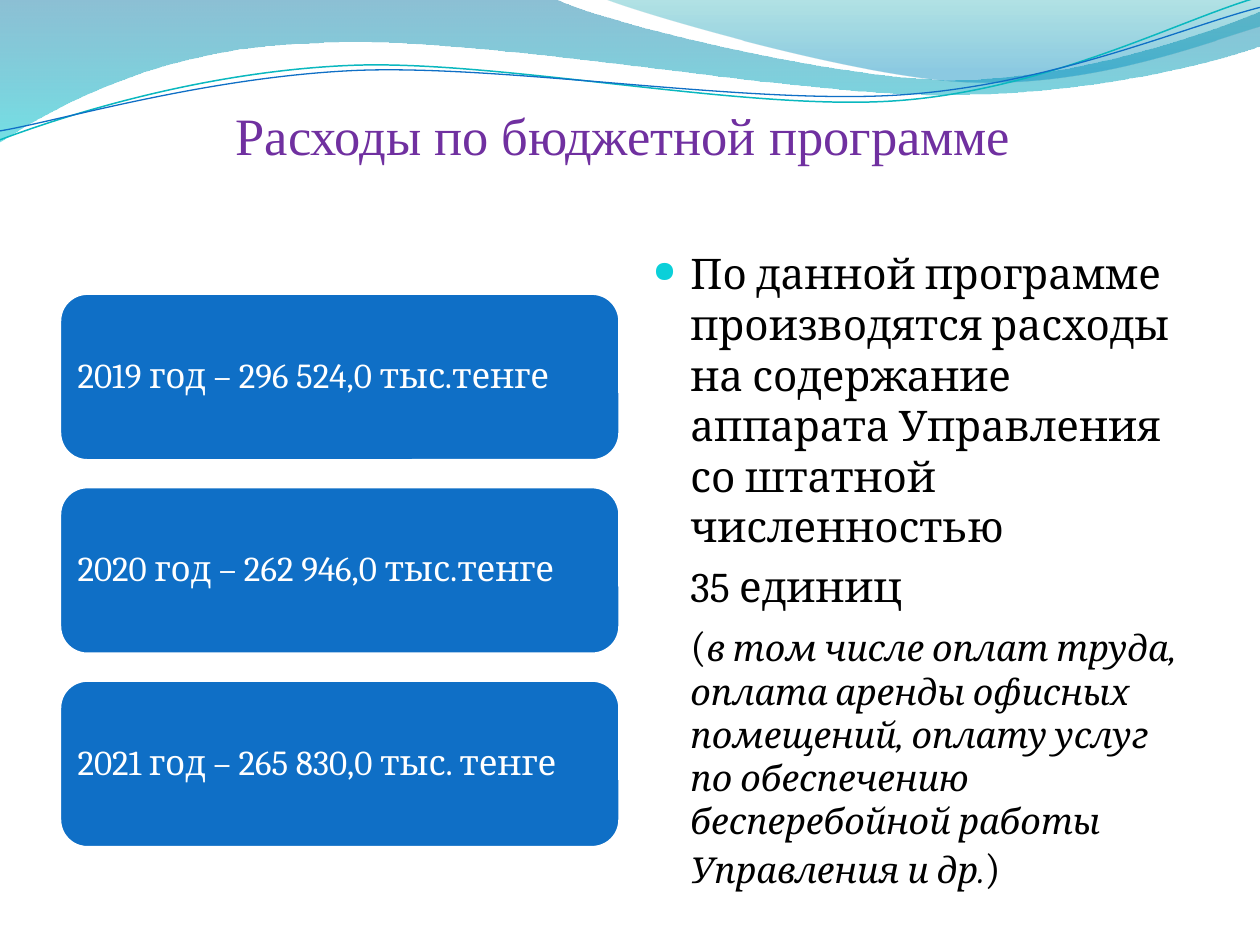
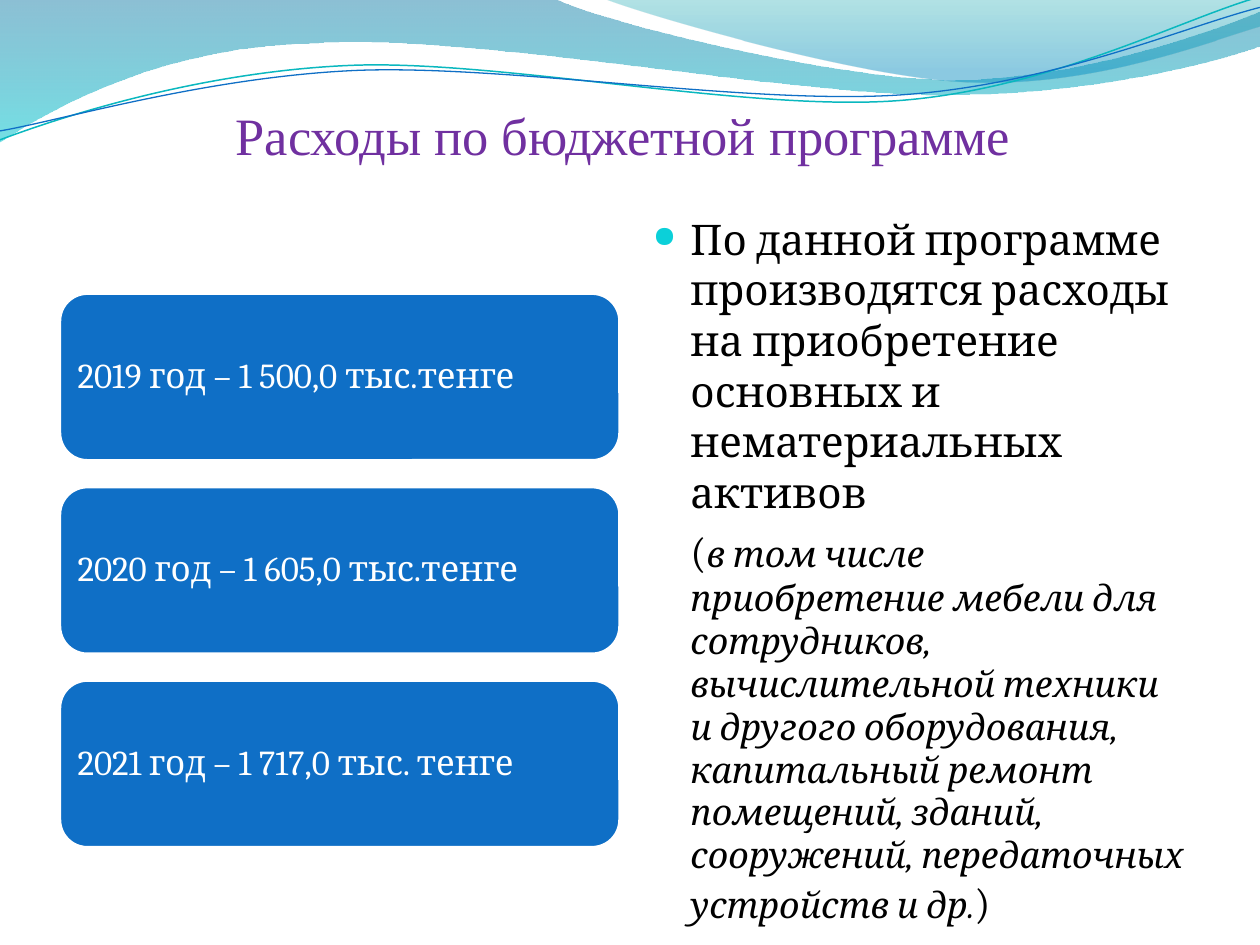
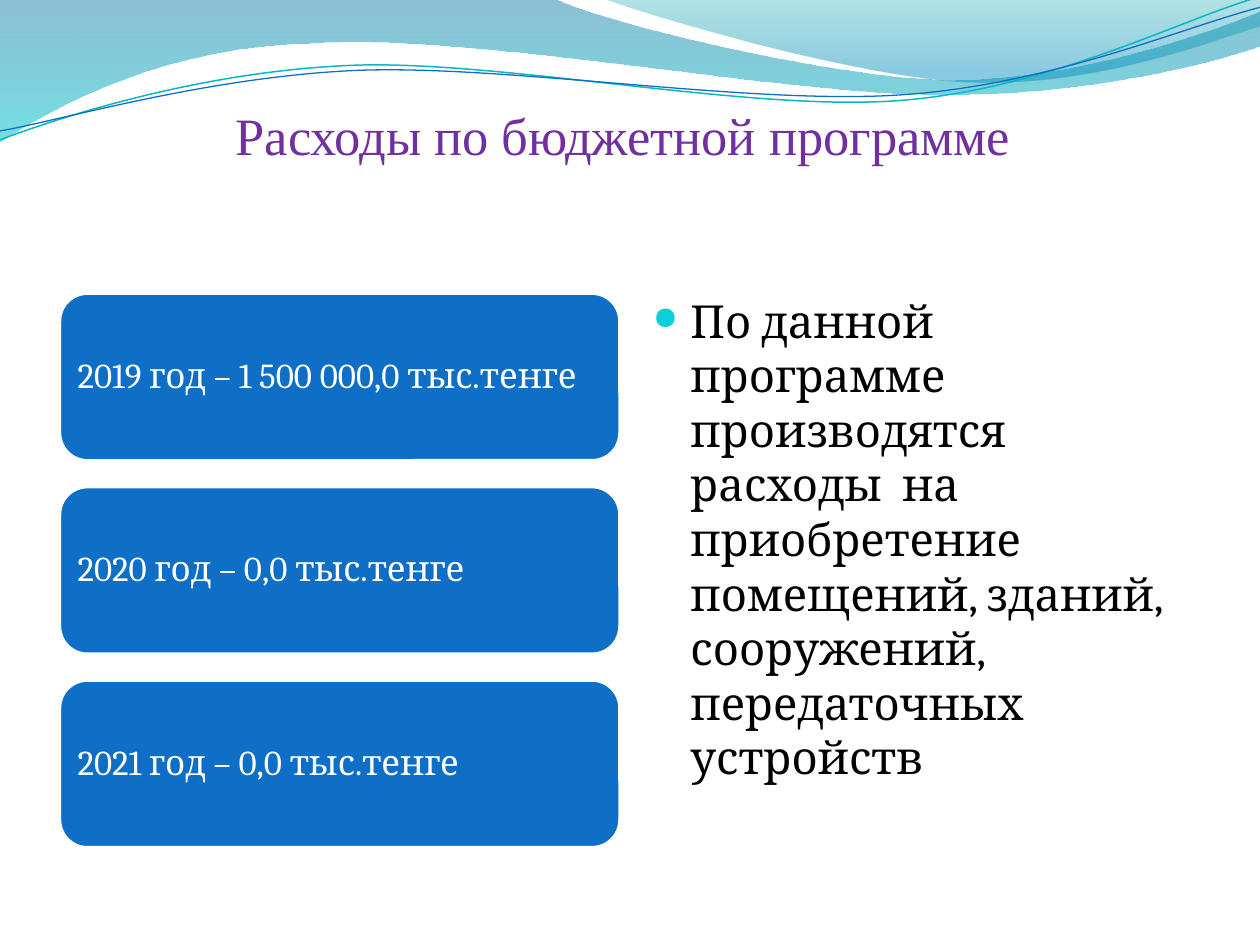
from dataclasses import dataclass

from lxml import etree
from pptx import Presentation
from pptx import util as u
from pptx.dml.color import RGBColor
from pptx.enum import shapes, text
from pptx.oxml.ns import qn


@dataclass(frozen=True)
class Theme:
    title: RGBColor = RGBColor(0x70, 0x30, 0xA0)
    card: RGBColor = RGBColor(0x0F, 0x6F, 0xC6)
    white: RGBColor = RGBColor(0xFF, 0xFF, 0xFF)
    black: RGBColor = RGBColor(0, 0, 0)
    bullet: str = "0BD0D9"
    teal_line: RGBColor = RGBColor(0x0A, 0xB8, 0xBF)
    # Gradient stops: position, colour, opacity in percent
    band: tuple = ((0, "0074A1", 45), (1, "00C6CF", 55))
    glow: tuple = ((0, "00A1A9", 30), (0.8, "008BBF", 45))
    title_font: str = "Times New Roman"
    body_font: str = "Cambria"
    title_size: float = 30
    card_size: float = 20
    detail_size: float = 20.4


TITLE = "Расходы по бюджетной программе "

# Outlines in cm: one point is a straight line, three points are a Bézier curve
BAND = [
    [(0, 0)], [(11.18, -0.03)],
    [(12.09, 0.43), (16.87, 1.6), (19.25, 1.6)],
    [(21.67, 1.6), (24.33, 0.66), (25.4, 0.23)],
    [(25.43, 0.91)],
    [(24.97, 1.12), (22.1, 1.93), (18.95, 1.91)],
    [(15.8, 1.91), (9.7, 0.71), (6.53, 0.86)],
    [(3.28, 0.91), (1.17, 2.11), (-0.03, 2.87)],
]
GLOW = [
    [(12.17, -0.03)],
    [(12.93, 0.28), (17.32, 1.57), (19.53, 1.65)],
    [(22.1, 1.75), (24.41, 0.81), (25.4, 0.53)],
    [(25.4, 0)],
]
TEAL_WAVE = [
    [(0, 2.82)],
    [(1.22, 2.36), (4.01, 1.45), (7.04, 1.32)],
    [(10.03, 1.19), (15.06, 2.26), (18.11, 2.03)],
    [(21.16, 1.8), (23.83, 0.38), (25.35, -0.05)],
]
BLUE_WAVE = [
    [(0, 2.64)],
    [(1.19, 2.44), (4.17, 1.55), (7.19, 1.42)],
    [(10.24, 1.3), (15.16, 2.13), (18.21, 1.91)],
    [(21.23, 1.7), (23.9, 0.53), (25.4, 0.15)],
]

# Each slide: yearly amounts, main text size, bottom margin in cm,
# paragraphs as lists of (text, italic) runs
SLIDES = [
    (["2019 год – 296 524,0 тыс.тенге",
      "2020 год – 262 946,0 тыс.тенге",
      "2021 год – 265 830,0 тыс. тенге"],
     24.1, 0.13,
     [[("По данной программе производятся расходы  на содержание аппарата "
        "Управления со штатной численностью", False)],
      [("35 единиц", False)],
      [("(", False),
       ("в том числе оплат труда, оплата аренды офисных помещений, оплату "
        "услуг по обеспечению бесперебойной работы Управления и др.", True),
       (")", False)]]),
    (["2019 год – 1 500,0 тыс.тенге",
      "2020 год – 1 605,0 тыс.тенге",
      "2021 год – 1 717,0 тыс. тенге"],
     24.1, 0.13,
     [[("По данной программе производятся расходы  на приобретение  основных "
        "и нематериальных активов", False)],
      [("(", False),
       ("в том числе приобретение мебели для сотрудников, вычислительной "
        "техники и другого оборудования, капитальный ремонт помещений, "
        "зданий, сооружений, передаточных устройств и др.", True),
       (")", False)]]),
    (["2019 год – 1 500 000,0 тыс.тенге",
      "2020 год – 0,0 тыс.тенге",
      "2021 год – 0,0 тыс.тенге"],
     26, 1.4,
     [[("По данной программе производятся расходы  на приобретение  "
        "помещений, зданий, сооружений, передаточных устройств", False)]]),
]


def bend(sp, segments):
    """Join the three straight steps of each curved segment into one Bézier."""
    steps = iter(list(sp.element.iter(qn("a:lnTo"))))
    for seg in segments[1:]:
        first, *others = [next(steps) for _ in seg]
        if others:
            first.tag = qn("a:cubicBezTo")
        for step in others:
            first.append(step[0])
            step.getparent().remove(step)


class Deck:
    def __init__(self, theme):
        self.theme = theme
        self.prs = Presentation()
        self.prs.slide_width, self.prs.slide_height = u.Cm(25.4), u.Cm(19.05)
        self.layout = self.prs.slide_layouts[5]
        self.s = None

    def new_slide(self):
        self.s = self.prs.slides.add_slide(self.layout)

    def font(self, target, name, size, color):
        target.font.name = name
        target.font.size = u.Pt(size)
        target.font.color.rgb = color

    def outline(self, segments, closed):
        """Draw an outline and move it to the layout, where all slides share it."""
        points = [(u.Cm(x), u.Cm(y)) for seg in segments for x, y in seg]
        builder = self.s.shapes.build_freeform(*points[0])
        builder.add_line_segments(points[1:], close=closed)
        sp = builder.convert_to_shape()
        bend(sp, segments)
        sp.shadow.inherit = False
        self.layout.shapes.element.append(sp.element)
        return sp

    def area(self, segments, stops):
        sp = self.outline(segments, True)
        sp.line.fill.background()
        sp.fill.gradient()
        sp.fill.gradient_angle = 270
        for stop, (position, color, _) in zip(sp.fill.gradient_stops, stops):
            stop.position = position
            stop.color.rgb = RGBColor.from_string(color)
        colors = sp.element.spPr.iter(qn("a:srgbClr"))
        for clr, (_, _, opacity) in zip(colors, stops):
            etree.SubElement(clr, qn("a:alpha"), val=str(opacity * 1000))

    def wave(self, segments, color, width):
        sp = self.outline(segments, False)
        sp.fill.background()
        sp.line.color.rgb = color
        sp.line.width = u.Pt(width)

    def background(self):
        self.area(BAND, self.theme.band)
        self.area(GLOW, self.theme.glow)
        self.wave(TEAL_WAVE, self.theme.teal_line, 0.85)
        self.wave(BLUE_WAVE, self.theme.card, 0.75)

    def title(self, words):
        sp = self.s.shapes.title
        sp.left, sp.top = u.Cm(1.27), u.Cm(1.95)
        sp.width, sp.height = u.Cm(22.86), u.Cm(3.18)
        tf = sp.text_frame
        tf.text = words
        tf.auto_size = text.MSO_AUTO_SIZE.NONE
        tf.vertical_anchor = text.MSO_ANCHOR.TOP
        tf.margin_left = tf.margin_right = tf.margin_bottom = 0
        tf.margin_top = u.Cm(0.13)
        p = tf.paragraphs[0]
        p.alignment = text.PP_ALIGN.CENTER
        self.font(p, self.theme.title_font, self.theme.title_size, self.theme.title)

    def card(self, row, words):
        sp = self.s.shapes.add_shape(
            shapes.MSO_SHAPE.ROUNDED_RECTANGLE,
            u.Cm(1.2), u.Cm(5.91 + 3.9 * row), u.Cm(11.3), u.Cm(3.38))
        sp.shadow.inherit = False
        sp.fill.solid()
        sp.fill.fore_color.rgb = self.theme.card
        sp.line.color.rgb = self.theme.white
        sp.line.width = u.Pt(2)
        tf = sp.text_frame
        tf.margin_left = tf.margin_right = u.Cm(0.2)
        tf.vertical_anchor = text.MSO_ANCHOR.MIDDLE
        tf.text = words
        p = tf.paragraphs[0]
        p.alignment = text.PP_ALIGN.LEFT
        p.line_spacing = 0.9
        self.font(p, self.theme.body_font, self.theme.card_size, self.theme.white)

    def bullet(self, p):
        pPr = p._p.get_or_add_pPr()
        pPr.set("indent", str(-u.Cm(0.76)))
        clr = etree.SubElement(pPr, qn("a:buClr"))
        etree.SubElement(clr, qn("a:srgbClr"), val=self.theme.bullet)
        etree.SubElement(pPr, qn("a:buSzPct"), val="70000")
        etree.SubElement(pPr, qn("a:buChar"), char="●")

    def description(self, paragraphs, size, bottom):
        tf = self.s.shapes.add_textbox(
            u.Cm(12.91), u.Cm(5.33), u.Cm(11.23), u.Cm(12.32)).text_frame
        tf.word_wrap = True
        tf.vertical_anchor = text.MSO_ANCHOR.MIDDLE
        tf.margin_bottom = u.Cm(bottom)
        for i, runs in enumerate(paragraphs):
            p = tf.add_paragraph() if i else tf.paragraphs[0]
            p.space_before = u.Pt(5)
            p._p.get_or_add_pPr().set("marL", str(u.Cm(0.76)))
            if i == 0:
                self.bullet(p)
            for words, italic in runs:
                r = p.add_run()
                r.text = words
                r.font.italic = italic
                self.font(r, self.theme.body_font,
                          self.theme.detail_size if italic else size,
                          self.theme.black)


def main():
    deck = Deck(Theme())
    for i, (amounts, size, bottom, paragraphs) in enumerate(SLIDES):
        deck.new_slide()
        if i == 0:
            deck.background()
        deck.title(TITLE)
        for row, amount in enumerate(amounts):
            deck.card(row, amount)
        deck.description(paragraphs, size, bottom)
    deck.prs.save("out.pptx")


if __name__ == "__main__":
    main()
